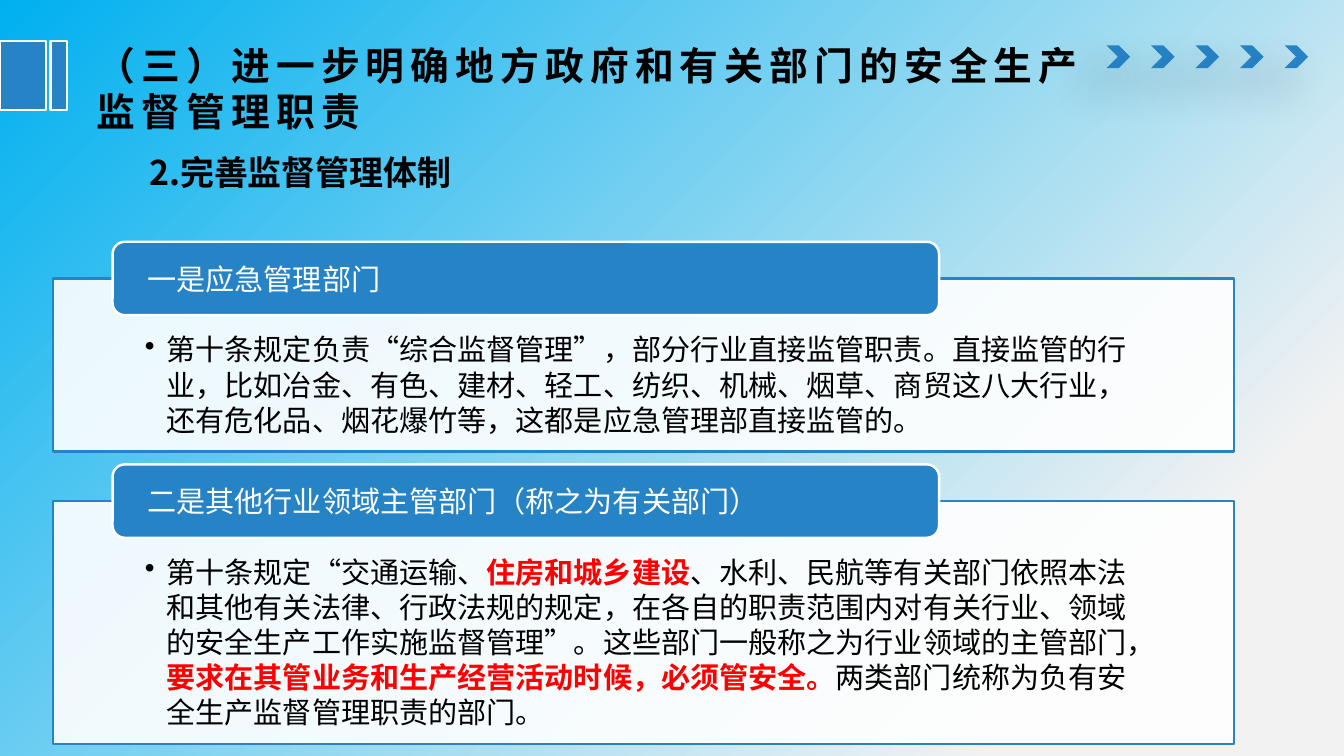
from lxml import etree
from pptx import Presentation
from pptx import util as u
from pptx.dml.color import RGBColor
from pptx.enum import shapes, text
from pptx.oxml import parse_xml
from pptx.oxml.ns import nsdecls, qn

PX = 9144  # 100 px to the inch
FONT = "Noto Sans CJK SC"
BLUE, WHITE, BLACK, RED = "2683C6", "FFFFFF", "000000", "FF0000"
SHAPE = shapes.MSO_SHAPE
color = RGBColor.from_string


def draw(kind, left, top, width, height, line=None, fill=BLUE):
    shape = slide.shapes.add_shape(kind, left * PX, top * PX, width * PX, height * PX)
    shape.shadow.inherit = False
    shape.fill.solid()
    shape.fill.fore_color.rgb = color(fill)
    if line:
        shape.line.color.rgb = color(line)
        shape.line.width = u.Pt(2)
    else:
        shape.line.fill.background()
    return shape


def write(shape, runs, size=24, bold=False, spacing=0, line_height=None,
          margins=(10, 5, 10, 5), anchor=text.MSO_ANCHOR.MIDDLE, bullet=False):
    """Fill a shape with (text, colour, emphasis) runs; a newline breaks the line."""
    frame = shape.text_frame
    frame.word_wrap = True
    frame.vertical_anchor = anchor
    (frame.margin_left, frame.margin_top,
     frame.margin_right, frame.margin_bottom) = [side * PX for side in margins]
    paragraph = frame.paragraphs[0]
    paragraph.alignment = text.PP_ALIGN.LEFT
    if line_height:
        paragraph.line_spacing = u.Pt(line_height)
    if bullet:
        properties = paragraph._p.get_or_add_pPr()
        properties.set("marL", str(25 * PX))
        properties.set("indent", str(-25 * PX))
        etree.SubElement(properties, qn("a:buChar")).set("char", "•")
    for words, ink, emphasis in runs:
        for number, part in enumerate(words.split("\n")):
            if number:
                paragraph.add_line_break()
            run = paragraph.add_run()
            run.text = part
            run.font.name = FONT
            run.font.size = u.Pt(size)
            run.font.bold = bold or emphasis
            run.font.color.rgb = color(ink)
            properties = run._r.get_or_add_rPr()
            properties.set("lang", "zh-CN")
            properties.set("spc", str(spacing * 100))
            etree.SubElement(properties, qn("a:ea")).set("typeface", FONT)


presentation = Presentation()
presentation.slide_width = 1540 * PX
presentation.slide_height = 866 * PX
slide = presentation.slides.add_slide(presentation.slide_layouts[6])

# Background: radial gradient from the top left corner
background = slide.background.fill
background.gradient()
for stop, (position, tint) in zip(background.gradient_stops, [(0, "00B0F0"), (0.83, "F2F2F2")]):
    stop.position = position
    stop.color.rgb = color(tint)
gradient = slide.element.find(".//" + qn("a:gradFill"))
gradient.replace(gradient.find(qn("a:lin")), parse_xml(
    f'<a:path {nsdecls("a")} path="circle"><a:fillToRect r="100000" b="100000"/></a:path>'))

# Row of chevrons with a soft shadow
for index in range(5):
    chevron = draw(SHAPE.CHEVRON, 1268 + 51 * index, 52, 27, 26)
    effects = chevron._element.spPr.find(qn("a:effectLst"))
    effects.append(parse_xml(
        f'<a:outerShdw {nsdecls("a")} blurRad="{u.Pt(36)}" dist="{u.Pt(24)}" dir="7800000">'
        '<a:srgbClr val="000000"><a:alpha val="38000"/></a:srgbClr></a:outerShdw>'))

# Blocks beside the title
for left, width in [(0, 53), (58, 19)]:
    draw(SHAPE.RECTANGLE, left, 47, width, 79, line=WHITE)

# Title and subtitle
title = slide.shapes.add_textbox(97 * PX, 48 * PX, 1186 * PX, 106 * PX)
write(title, [("（三）进一步明确地方政府和有关部门的安全生产\n监督管理职责", BLACK, False)],
      size=32, bold=True, spacing=5, line_height=38.4, margins=(14, 7, 14, 7))
subtitle = slide.shapes.add_textbox(85 * PX, 165 * PX, 1344 * PX, 60 * PX)
write(subtitle, [("2.完善监督管理体制", BLACK, False)], size=28, bold=True, line_height=36,
      margins=(86, 5, 10, 5), anchor=text.MSO_ANCHOR.TOP)

# Cards: top, height, heading, body
cards = [
    (319, 198, "一是应急管理部门", [
        ("第十条规定负责“综合监督管理”，部分行业直接监管职责。直接监管的行业，比如冶金、有色、"
         "建材、轻工、纺织、机械、烟草、商贸这八大行业，还有危化品、烟花爆竹等，"
         "这都是应急管理部直接监管的。", BLACK, False)]),
    (574, 278, "二是其他行业领域主管部门（称之为有关部门）", [
        ("第十条规定“交通运输、", BLACK, False),
        ("住房和城乡建设", RED, True),
        ("、水利、民航等有关部门依照本法和其他有关法律、行政法规的规定，在各自的职责范围内对"
         "有关行业、领域的安全生产工作实施监督管理”。这些部门一般称之为行业领域的主管部门，",
         BLACK, False),
        ("要求在其管业务和生产经营活动时候，必须管安全。", RED, True),
        ("两类部门统称为负有安全生产监督管理职责的部门。", BLACK, False)]),
]
for top, height, heading, body in cards:
    card = draw(SHAPE.RECTANGLE, 61, top, 1353, height, line=BLUE, fill=WHITE)
    fill_color = card._element.spPr.find(qn("a:solidFill"))[0]
    etree.SubElement(fill_color, qn("a:alpha")).set("val", "90000")
    write(card, body, line_height=28.9, margins=(105, 61, 105, 19),
          anchor=text.MSO_ANCHOR.TOP, bullet=True)
    label = draw(SHAPE.ROUNDED_RECTANGLE, 129, top - 42, 947, 84, line=WHITE)
    write(label, [(heading, WHITE, False)], margins=(36, 0, 36, 0))

presentation.save("out.pptx")
